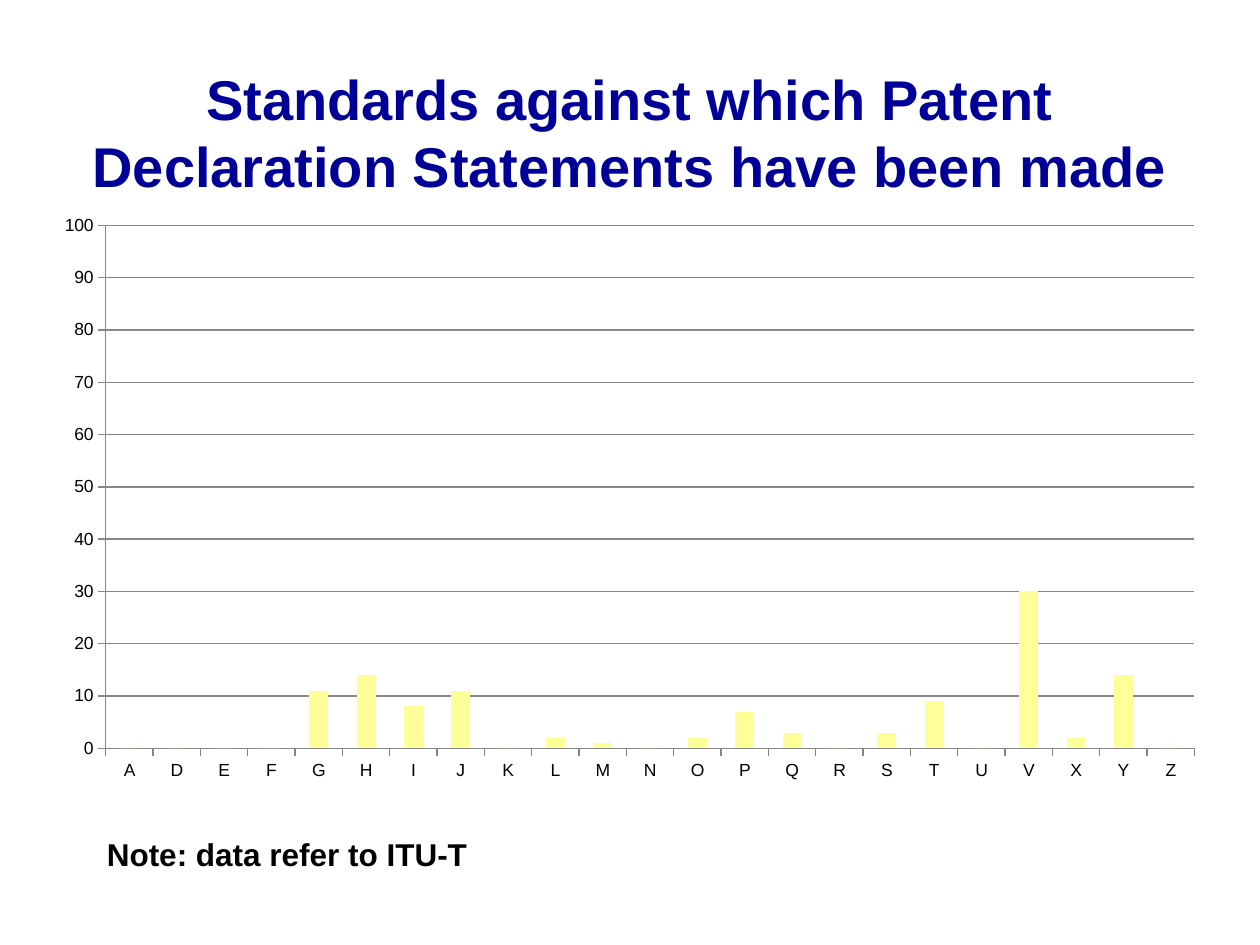
"""Build the slide on standards that have patent declaration statements."""
from dataclasses import dataclass

from lxml import etree
from pptx import Presentation
from pptx.chart.chart import Chart
from pptx.chart.data import CategoryChartData
from pptx.dml.color import RGBColor
from pptx.enum.chart import XL_CHART_TYPE as ChartType, XL_TICK_MARK as TickMark
from pptx.enum.text import MSO_ANCHOR as Anchor, PP_ALIGN as Align
from pptx.oxml.ns import qn
from pptx.text.text import Font
from pptx.util import Inches, Pt

NAVY = RGBColor(0x00, 0x00, 0x99)
BLACK = RGBColor(0x00, 0x00, 0x00)
YELLOW = RGBColor(0xFF, 0xFF, 0x99)
GRAY = RGBColor(0x87, 0x87, 0x87)

PERCENTAGES = {
    "A": 0, "D": 0, "E": 0, "F": 0, "G": 11, "H": 14, "I": 8, "J": 11,
    "K": 0, "L": 2, "M": 1, "N": 0, "O": 2, "P": 7, "Q": 3, "R": 0,
    "S": 3, "T": 9, "U": 0, "V": 30, "X": 2, "Y": 14, "Z": 0,
}


@dataclass(frozen=True)
class Box:
    left: float
    top: float
    width: float
    height: float

    def lengths(self) -> tuple:
        return tuple(map(Inches, (self.left, self.top, self.width, self.height)))


TITLE_BOX = Box(0.33, 0.42, 9.34, 1.25)
CHART_BOX = Box(0.33, 1.63, 9.34, 4.67)
PLOT_BOX = Box(0.84, 1.79, 8.64, 4.15)
NOTE_BOX = Box(0.75, 6.58, 3.06, 0.4)


def format_font(font: Font, size: int, color: RGBColor, bold: bool = False) -> None:
    font.name = "Arial"
    font.size = Pt(size)
    font.bold = bold
    font.color.rgb = color


def add_title(slide, text: str) -> None:
    title = slide.shapes.title
    title.left, title.top, title.width, title.height = TITLE_BOX.lengths()
    title.text_frame.text = text
    title.text_frame.vertical_anchor = Anchor.MIDDLE
    paragraph = title.text_frame.paragraphs[0]
    paragraph.alignment = Align.CENTER
    format_font(paragraph.runs[0].font, 32, NAVY, bold=True)


def place_plot(chart: Chart) -> None:
    plot_area = chart.plot_area_element if hasattr(chart, "plot_area_element") else (
        chart.element.find(".//" + qn("c:plotArea")))
    for old_layout in plot_area.findall(qn("c:layout")):
        plot_area.remove(old_layout)
    layout = etree.Element(qn("c:layout"))
    manual = etree.SubElement(layout, qn("c:manualLayout"))
    settings = {
        "layoutTarget": "inner", "xMode": "edge", "yMode": "edge",
        "x": (PLOT_BOX.left - CHART_BOX.left) / CHART_BOX.width,
        "y": (PLOT_BOX.top - CHART_BOX.top) / CHART_BOX.height,
        "w": PLOT_BOX.width / CHART_BOX.width,
        "h": PLOT_BOX.height / CHART_BOX.height,
    }
    for name, value in settings.items():
        etree.SubElement(manual, qn(f"c:{name}")).set("val", str(value))
    plot_area.insert(0, layout)


def add_column_chart(slide) -> None:
    data = CategoryChartData(number_format="0")
    data.categories = list(PERCENTAGES)
    data.add_series("Series 1", list(PERCENTAGES.values()))
    chart = slide.shapes.add_chart(
        ChartType.COLUMN_CLUSTERED, *CHART_BOX.lengths(), data).chart
    chart.has_legend = False
    chart.has_title = False
    format_font(chart.font, 10, BLACK)

    plot = chart.plots[0]
    plot.vary_by_categories = False
    plot.gap_width = 150
    fill = plot.series[0].format.fill
    fill.solid()
    fill.fore_color.rgb = YELLOW

    value_axis = chart.value_axis
    value_axis.minimum_scale = 0
    value_axis.maximum_scale = 100
    value_axis.major_unit = 10
    value_axis.has_major_gridlines = True
    value_axis.tick_labels.number_format = "0"
    value_axis.tick_labels.number_format_is_linked = False
    for axis in (chart.category_axis, value_axis):
        axis.major_tick_mark = TickMark.OUTSIDE
    for part in (chart.category_axis, value_axis, value_axis.major_gridlines):
        part.format.line.color.rgb = GRAY
        part.format.line.width = Pt(0.75)
    place_plot(chart)


def add_note(slide, text: str) -> None:
    text_frame = slide.shapes.add_textbox(*NOTE_BOX.lengths()).text_frame
    text_frame.word_wrap = False
    text_frame.text = text
    format_font(text_frame.paragraphs[0].runs[0].font, 18, BLACK, bold=True)


def main() -> None:
    presentation = Presentation()
    presentation.slide_width = Inches(10)
    presentation.slide_height = Inches(7.5)
    slide = presentation.slides.add_slide(presentation.slide_layouts[5])
    add_title(slide, "Standards against which Patent Declaration Statements have been made")
    add_column_chart(slide)
    add_note(slide, "Note: data refer to ITU-T")
    presentation.save("out.pptx")


if __name__ == "__main__":
    main()
